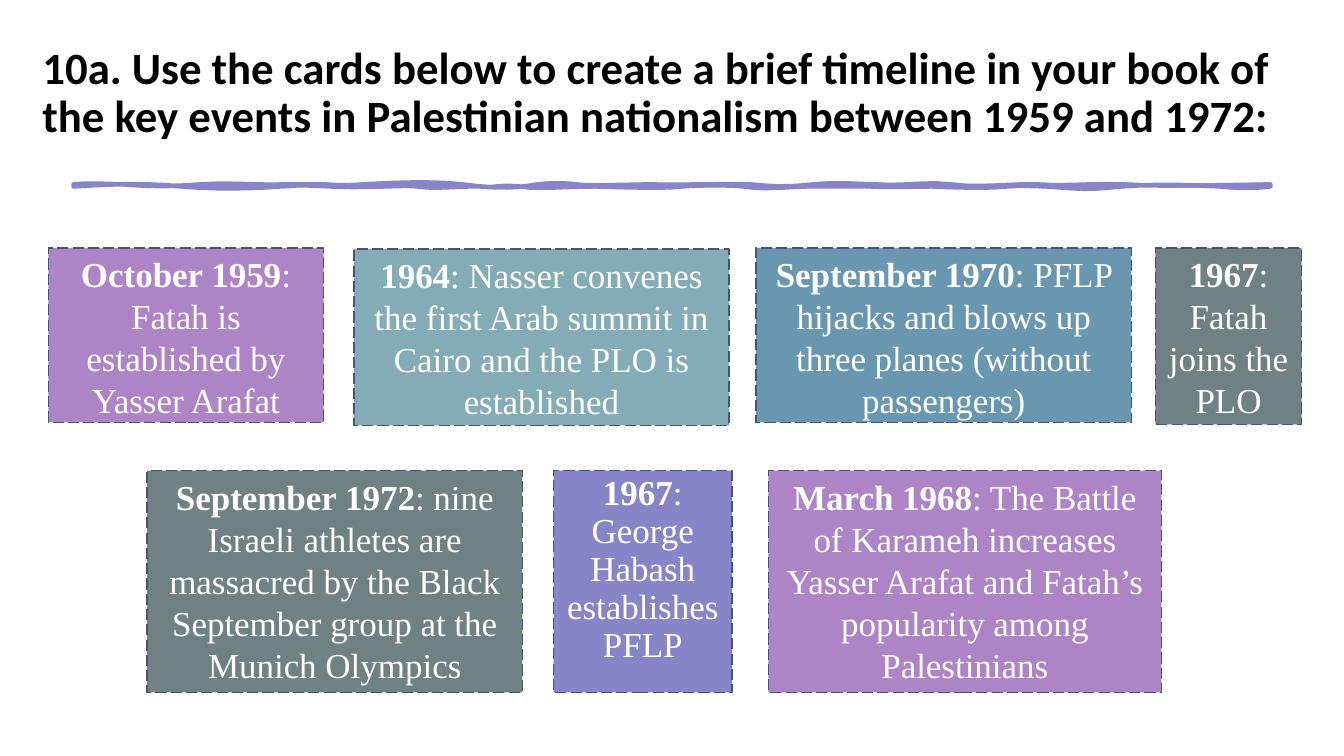
from dataclasses import dataclass

from pptx import Presentation
from pptx.dml.color import RGBColor
from pptx.enum.dml import MSO_LINE
from pptx.enum.shapes import MSO_SHAPE
from pptx.enum.text import MSO_ANCHOR, MSO_AUTO_SIZE, PP_ALIGN
from pptx.util import Inches, Pt

PURPLE, LAVENDER, TEAL, BLUE, SLATE = "AD84C6", "8784C7", "84ACB6", "6997AF", "6F8183"
CARD_BORDER = "455572"
CURVE_STEPS = 6


@dataclass
class Card:
    left: float
    top: float
    width: float
    height: float
    color: str
    date: str
    event: str
    line_spacing: float = 1.0
    space_before: float = 0


CARDS = [
    Card(5.49, 4.67, 1.77, 2.2, LAVENDER, "1967", "George Habash establishes PFLP", 0.9, 10),
    Card(3.51, 2.47, 3.72, 1.75, TEAL, "1964",
         "Nasser convenes the first Arab summit in Cairo and the PLO is established"),
    Card(0.48, 2.46, 2.73, 1.73, PURPLE, "October 1959", "Fatah is established by Yasser Arafat"),
    Card(1.46, 4.67, 3.72, 2.2, SLATE, "September 1972",
         "nine Israeli athletes are massacred by the Black September group at the Munich Olympics"),
    Card(7.5, 2.46, 3.72, 1.73, BLUE, "September 1970",
         "PFLP hijacks and blows up three planes (without passengers)"),
    Card(7.62, 4.67, 3.9, 2.2, PURPLE, "March 1968",
         "The Battle of Karameh increases Yasser Arafat and Fatah’s popularity among Palestinians"),
    Card(11.46, 2.46, 1.45, 1.75, SLATE, "1967", "Fatah joins the PLO"),
]

# Each wave of the divider: control x, y, control x, y, end x; an edge ends every wave at its own height
UPPER_Y, LOWER_Y = 1.83, 1.85
UPPER_WAVES = [
    (0.89, 1.81, 1.11, 1.83, 1.24), (1.36, 1.84, 1.62, 1.86, 1.98), (2.34, 1.81, 2.51, 1.84, 2.84),
    (3.17, 1.83, 3.07, 1.83, 3.22), (3.38, 1.84, 3.42, 1.84, 3.61), (3.8, 1.82, 4.24, 1.79, 4.59),
    (4.94, 1.88, 5.17, 1.86, 5.33), (5.49, 1.81, 5.63, 1.82, 5.72), (5.81, 1.85, 6.25, 1.83, 6.46),
    (6.67, 1.84, 7.23, 1.82, 7.44), (7.65, 1.85, 7.82, 1.86, 8.06), (8.3, 1.81, 8.38, 1.82, 8.68),
    (8.99, 1.85, 9.14, 1.8, 9.43), (9.72, 1.87, 10.02, 1.82, 10.29),
    (10.55, 1.85, 10.78, 1.82, 11.15), (11.51, 1.85, 11.99, 1.84, 12.6),
]
LOWER_WAVES = [
    (12.42, 1.87, 12.3, 1.87, 12.1), (11.9, 1.84, 11.49, 1.82, 11.12),
    (10.75, 1.89, 10.7, 1.87, 10.38), (10.05, 1.84, 10.18, 1.84, 9.99),
    (9.8, 1.87, 9.48, 1.86, 9.25), (9.02, 1.85, 8.84, 1.86, 8.63), (8.41, 1.85, 8.28, 1.85, 8.0),
    (7.73, 1.86, 7.57, 1.88, 7.38), (7.19, 1.83, 6.88, 1.84, 6.76), (6.63, 1.87, 6.24, 1.86, 5.9),
    (5.55, 1.85, 5.37, 1.88, 5.15), (4.94, 1.83, 4.91, 1.87, 4.77), (4.63, 1.84, 4.3, 1.88, 4.14),
    (3.99, 1.83, 3.71, 1.87, 3.28), (2.86, 1.83, 3.03, 1.84, 2.78), (2.53, 1.87, 2.13, 1.88, 1.8),
    (1.47, 1.82, 1.18, 1.82, 0.73),
]


def rgb(color: str) -> RGBColor:
    return RGBColor.from_string(color)


def add_run(paragraph, text: str, *, size: float, font: str, color: str, bold: bool = False) -> None:
    run = paragraph.add_run()
    run.text = text
    run.font.size = Pt(size)
    run.font.name = font
    run.font.bold = bold
    run.font.color.rgb = rgb(color)


def paint(shape, fill: str, line: str, width: float) -> None:
    shape.shadow.inherit = False
    shape.fill.solid()
    shape.fill.fore_color.rgb = rgb(fill)
    shape.line.color.rgb = rgb(line)
    shape.line.width = Pt(width)


def wavy_edge(start_x: float, y: float, waves: list) -> list[tuple[float, float]]:
    points = [(start_x, y)]
    for x1, y1, x2, y2, end_x in waves:
        x0 = points[-1][0]
        for step in range(1, CURVE_STEPS + 1):
            t = step / CURVE_STEPS
            a, b, c, d = (1 - t) ** 3, 3 * t * (1 - t) ** 2, 3 * t * t * (1 - t), t ** 3
            points.append((a * x0 + b * x1 + c * x2 + d * end_x, (a + d) * y + b * y1 + c * y2))
    return points


def add_divider(slide) -> None:
    outline = wavy_edge(0.73, UPPER_Y, UPPER_WAVES) + wavy_edge(12.6, LOWER_Y, LOWER_WAVES)
    start, *rest = [(Inches(x), Inches(y)) for x, y in outline]
    builder = slide.shapes.build_freeform(*start)
    builder.add_line_segments(rest, close=True)
    paint(builder.convert_to_shape(), LAVENDER, LAVENDER, 3.25)


def add_card(slide, card: Card) -> None:
    box = slide.shapes.add_shape(
        MSO_SHAPE.RECTANGLE,
        Inches(card.left), Inches(card.top), Inches(card.width), Inches(card.height))
    paint(box, card.color, CARD_BORDER, 1)
    box.line.dash_style = MSO_LINE.LONG_DASH
    frame = box.text_frame
    frame.word_wrap = True
    frame.vertical_anchor = MSO_ANCHOR.TOP
    paragraph = frame.paragraphs[0]
    paragraph.alignment = PP_ALIGN.CENTER
    paragraph.line_spacing = card.line_spacing
    paragraph.space_before = Pt(card.space_before)
    for text, bold in ((card.date, True), (f": {card.event}", False)):
        add_run(paragraph, text, size=25, font="Times New Roman", color="FFFFFF", bold=bold)


def add_title(slide, text: str) -> None:
    title = slide.shapes.title
    title.left, title.top = Inches(0.32), Inches(0.21)
    title.width, title.height = Inches(12.74), Inches(1.45)
    frame = title.text_frame
    frame.word_wrap = True
    frame.auto_size = MSO_AUTO_SIZE.NONE
    frame.vertical_anchor = MSO_ANCHOR.MIDDLE
    paragraph = frame.paragraphs[0]
    paragraph.alignment = PP_ALIGN.LEFT
    paragraph.line_spacing = 0.9
    add_run(paragraph, text, size=32, font="Calibri", color="000000", bold=True)


def main() -> None:
    deck = Presentation()
    deck.slide_width, deck.slide_height = Inches(13.33), Inches(7.5)
    slide = deck.slides.add_slide(deck.slide_layouts[5])

    # Heading and divider
    add_title(slide, "10a. Use the cards below to create a brief timeline in your book of "
                     "the key events in Palestinian nationalism between 1959 and 1972:")
    add_divider(slide)

    # Event cards
    for card in CARDS:
        add_card(slide, card)

    deck.save("out.pptx")


if __name__ == "__main__":
    main()
